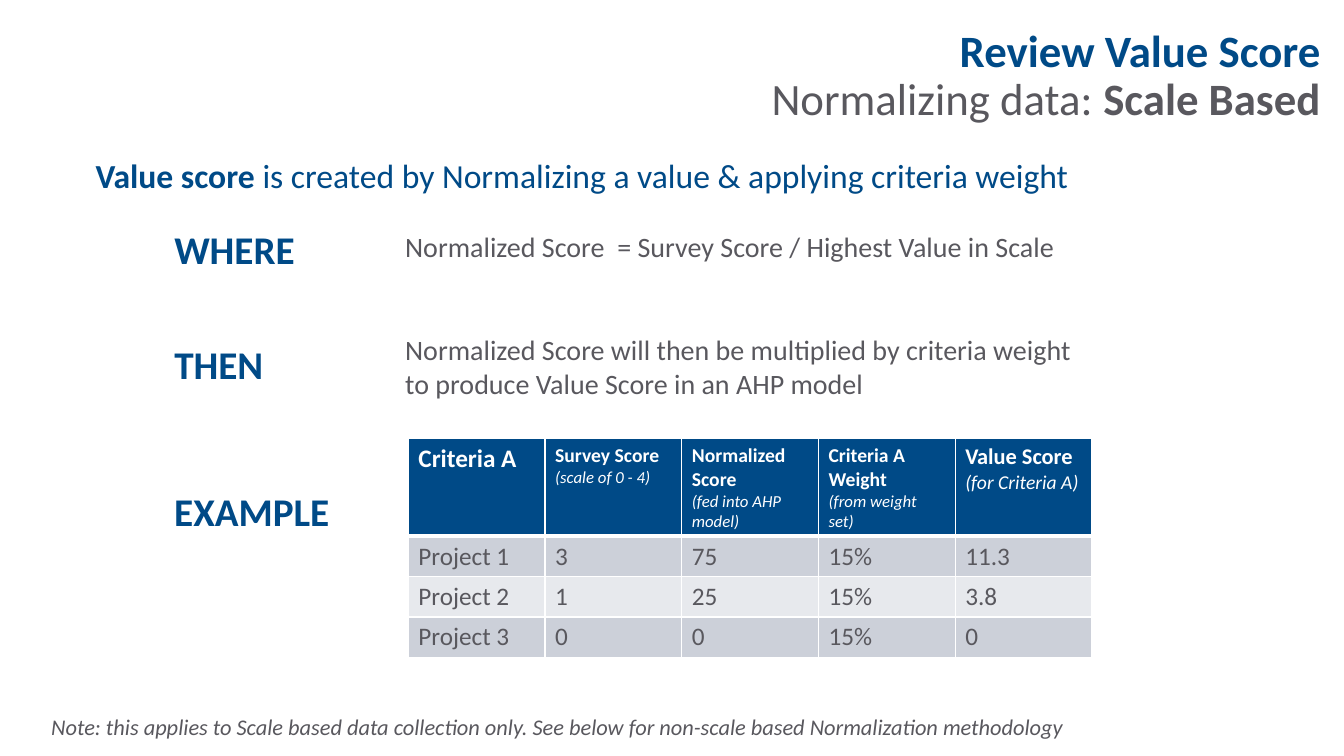
"""Builds the slide that explains scale-based normalizing of value scores."""
import copy

import lxml.etree
import pptx
import pptx.dml.color
import pptx.enum.text
import pptx.oxml
import pptx.oxml.ns
import pptx.util

Inches = pptx.util.Inches
BLUE = pptx.dml.color.RGBColor(0x00, 0x4A, 0x87)
GRAY = pptx.dml.color.RGBColor(0x59, 0x58, 0x5E)
WHITE = pptx.dml.color.RGBColor(0xFF, 0xFF, 0xFF)
DARK_BAND = pptx.dml.color.RGBColor(0xCC, 0xD0, 0xD9)
LIGHT_BAND = pptx.dml.color.RGBColor(0xE7, 0xE9, 0xED)

LABELS = [("WHERE", 2.19, 1.41), ("THEN", 3.33, 1.09), ("EXAMPLE", 4.79, 1.76)]
STATEMENTS = [
    ("Normalized Score  = Survey Score / Highest Value in Scale", 2.23, 7.74, 0.44),
    ("Normalized Score will then be multiplied by criteria weight "
     "to produce Value Score in an AHP model", 3.25, 6.92, 0.77),
]
HEADERS = [
    ("Criteria A", 18, ""),
    ("Survey Score", 14, "(scale of 0 - 4)"),
    ("Normalized Score", 14, "(fed into AHP model)"),
    ("Criteria A Weight", 14, "(from weight set)"),
    ("Value Score", 16, "(for Criteria A)"),
]
PROJECTS = [
    ("Project 1", "3", "75", "15%", "11.3"),
    ("Project 2", "1", "25", "15%", "3.8"),
    ("Project 3", "0", "0", "15%", "0"),
]


def style(size, color, bold=False, italic=False):
    return {"name": "Calibri", "size": pptx.util.Pt(size), "bold": bold,
            "italic": italic, "color": color}


def write(para, *spans):
    for text, formats in spans:
        span = para.add_run()
        span.text = text.rstrip("\n")
        for key, value in formats.items():
            if key == "color":
                span.font.color.rgb = value
            else:
                setattr(span.font, key, value)
        if text.endswith("\n"):
            para.add_line_break()
            para._p[-1].append(copy.deepcopy(span._r.rPr))


def add_text(page, position, *spans, wrap=True):
    box = page.shapes.add_textbox(*map(Inches, position))
    box.text_frame.word_wrap = wrap
    box.text_frame.auto_size = pptx.enum.text.MSO_AUTO_SIZE.SHAPE_TO_FIT_TEXT
    write(box.text_frame.paragraphs[0], *spans)


def add_title(page):
    title = page.shapes.title
    title.left, title.top, title.width, title.height = map(
        Inches, (4.31, 0.04, 8.89, 1.45))
    title.fill.solid()
    title.fill.fore_color.rgb = WHITE
    tint = title.fill._xPr.find(".//" + pptx.oxml.ns.qn("a:srgbClr"))
    lxml.etree.SubElement(tint, pptx.oxml.ns.qn("a:alpha"), val="70000")
    frame = title.text_frame
    frame.auto_size = pptx.enum.text.MSO_AUTO_SIZE.NONE
    frame.vertical_anchor = pptx.enum.text.MSO_ANCHOR.MIDDLE
    para = frame.paragraphs[0]
    para.alignment = pptx.enum.text.PP_ALIGN.RIGHT
    para.line_spacing = 0.9
    write(para, ("Review Value Score\n", style(32, BLUE, bold=True)),
          ("Normalizing data: ", style(32, GRAY)),
          ("Scale Based", style(32, GRAY, bold=True)))


def format_cell(cell, fill, top=1, bottom=1):
    cell.fill.solid()
    cell.fill.fore_color.rgb = fill
    widths = {"L": 1, "R": 1, "T": top, "B": bottom}
    for index, (side, width) in enumerate(widths.items()):
        border = pptx.oxml.parse_xml(
            f'<a:ln{side} {pptx.oxml.ns.nsdecls("a")} w="{pptx.util.Pt(width)}">'
            f'<a:solidFill><a:srgbClr val="{WHITE}"/></a:solidFill></a:ln{side}>')
        cell._tc.get_or_add_tcPr().insert(index, border)


def add_header(cell, heading, size, detail):
    format_cell(cell, BLUE, bottom=3)
    para = cell.text_frame.paragraphs[0]
    heading_style = style(size, WHITE, bold=True)
    if detail:
        write(para, (heading + "\n", heading_style),
              (detail, style(size - 2, WHITE, italic=True)))
    else:
        write(para, (heading, heading_style))


def add_score_table(page):
    frame = page.shapes.add_table(
        len(PROJECTS) + 1, len(HEADERS), *map(Inches, (4.05, 4.35, 6.78, 2.17)))
    table = frame.table
    for row in table.rows:
        row.height = Inches(0.4)
    table.rows[0].height = Inches(0.97)
    for column, header in enumerate(HEADERS):
        add_header(table.cell(0, column), *header)
    for row, project in enumerate(PROJECTS, start=1):
        for column, value in enumerate(project):
            cell = table.cell(row, column)
            format_cell(cell, DARK_BAND if row % 2 else LIGHT_BAND,
                        top=3 if row == 1 else 1)
            write(cell.text_frame.paragraphs[0], (value, style(18, GRAY)))


def main():
    deck = pptx.Presentation()
    deck.slide_width, deck.slide_height = Inches(13.33), Inches(7.5)
    page = deck.slides.add_slide(deck.slide_layouts[5])
    add_title(page)
    add_text(page, (0.85, 1.49, 12.88, 0.5),
             ("Value score ", style(24, BLUE, bold=True)),
             ("is created by Normalizing a value & applying criteria weight",
              style(24, BLUE)))
    for text, top, width, height in STATEMENTS:
        add_text(page, (3.92, top, width, height), (text, style(20, GRAY)))
    for text, top, width in LABELS:
        add_text(page, (1.63, top, width, 0.57),
                 (text, style(28, BLUE, bold=True)), wrap=False)
    add_score_table(page)
    add_text(page, (0.41, 7.03, 10.43, 0.37),
             ("Note: this applies to Scale based data collection only. "
              "See below for non-scale based Normalization methodology",
              style(16, GRAY, italic=True)), wrap=False)
    deck.save("out.pptx")


if __name__ == "__main__":
    main()
